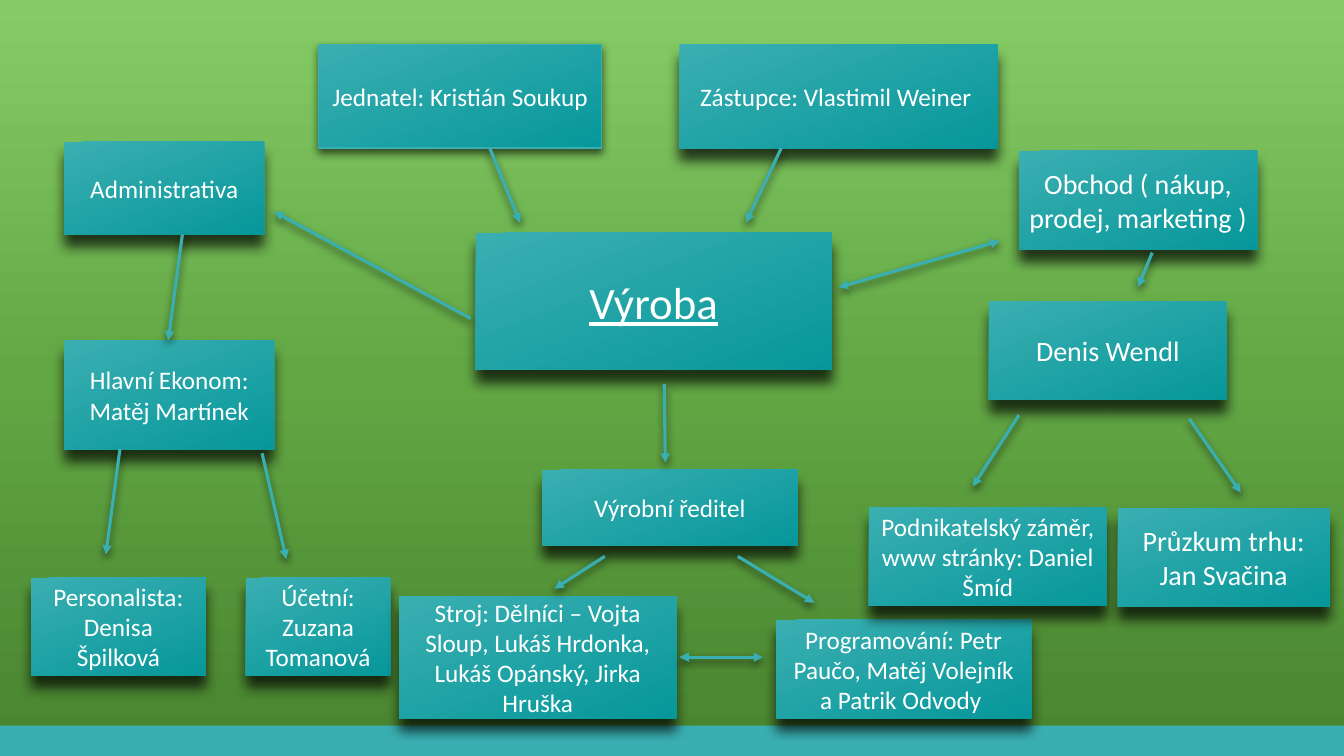
from copy import deepcopy

from lxml.etree import SubElement
from pptx import Presentation
from pptx.dml.color import RGBColor
from pptx.enum.shapes import MSO_CONNECTOR, MSO_SHAPE
from pptx.enum.text import MSO_ANCHOR, PP_ALIGN
from pptx.oxml.ns import qn
from pptx.util import Pt

TEAL, DEEP, WHITE = "3AAFB2", "07979A", "FFFFFF"
WIDE, HIGH = 960, 540


def paint(color, code):
    color.rgb = RGBColor.from_string(code)


def shade(shape, alpha, blur, dist):
    """Give the shape a black shadow that falls straight down."""
    effect = SubElement(shape.element.spPr, qn("a:effectLst"))
    outer = SubElement(effect, qn("a:outerShdw"), blurRad=str(Pt(blur)),
                       dist=str(Pt(dist)), dir="5400000", algn="ctr", rotWithShape="0")
    black = SubElement(outer, qn("a:srgbClr"), val="000000")
    SubElement(black, qn("a:alpha"), val=str(alpha * 1000))


def write(shape, text, size=18, color=WHITE, under=False):
    frame = shape.text_frame
    frame.word_wrap = True
    frame.vertical_anchor = MSO_ANCHOR.MIDDLE
    para = frame.paragraphs[0]
    para.alignment = PP_ALIGN.CENTER
    run = para.add_run()
    run.text = text
    run.font.name = "Calibri"
    run.font.size = Pt(size)
    run.font.underline = under
    paint(run.font.color, color)


def card(slide, x, y, w, h, text, edge=False, **style):
    shape = slide.shapes.add_shape(MSO_SHAPE.RECTANGLE, Pt(x), Pt(y), Pt(w), Pt(h))
    shape.fill.gradient()
    shape.fill.gradient_angle = 291
    for stop, code in zip(shape.fill.gradient_stops, (TEAL, DEEP)):
        paint(stop.color, code)
    if edge:
        shape.line.width = Pt(1)
        shape.line.fill.solid()
        paint(shape.line.color, TEAL)
        shade(shape, 60, 6, 3)
    else:
        shape.line.fill.background()
        shade(shape, 70, 9, 9)
    write(shape, text, **style)


def arrow(slide, x, y, dx, dy, both=False):
    """Draw an arrow from (x, y) that runs by (dx, dy)."""
    link = slide.shapes.add_connector(
        MSO_CONNECTOR.STRAIGHT, Pt(x), Pt(y), Pt(x + dx), Pt(y + dy))
    link.line.width = Pt(2.25)
    link.line.fill.solid()
    paint(link.line.color, TEAL)
    line = link.element.spPr.find(qn("a:ln"))
    for end in ("a:headEnd", "a:tailEnd") if both else ("a:tailEnd",):
        SubElement(line, qn(end), type="triangle")
    shade(link, 60, 6, 3)


def ground(slide):
    fill = slide.background.fill
    fill.gradient()
    fill.gradient_angle = 270
    stops = slide.element.find(".//" + qn("a:gsLst"))
    stops.insert(1, deepcopy(stops[0]))
    for stop, code, place in zip(fill.gradient_stops,
                                 ("85CB66", "62A744", "49832F"), (0, 0.5, 1)):
        paint(stop.color, code)
        stop.position = place


def strip(slide, x, y, w, h):
    bar = slide.shapes.add_shape(MSO_SHAPE.RECTANGLE, Pt(x), Pt(y), Pt(w), Pt(h))
    bar.shadow.inherit = False
    bar.fill.solid()
    paint(bar.fill.fore_color, TEAL)
    bar.line.fill.background()


def heads(slide, x, y, w, h):
    tall = 74.2
    card(slide, x, y, 202.3, tall, "Jednatel: Kristián Soukup", edge=True)
    card(slide, x + w - 227.5, y, 227.5, tall, "Zástupce: Vlastimil Weiner ")
    arrow(slide, x + 122.4, y + tall, 21.6, h - tall)
    arrow(slide, x + 330.5, y + tall, -25.2, h - tall)


def office(slide, x, y, w, h):
    left, low = x + 23.7, y + h - 69.8
    card(slide, left, y, 142.6, 66.2, "Administrativa")
    card(slide, left, y + 141.9, 149.8, 77.8, "Hlavní Ekonom: Matěj Martínek")
    card(slide, x, low, 124.6, 69.8, "Personalista: Denisa Špilková")
    card(slide, x + w - 103, low, 103, 69.8, "Účetní: Zuzana Tomanová")
    arrow(slide, x + 108, y + 66.2, -10.1, 75.6)
    arrow(slide, x + 63.4, y + 219.2, -10.1, 75.6)
    arrow(slide, x + 164.9, y + 222.5, 17.3, 75.6)


def works(slide, x, y, w, h):
    card(slide, x + 54.7, y, 254.2, 97.9, "Výroba", size=32, under=True)
    card(slide, x + 102.3, y + 169.2, 182.2, 54, "Výrobní ředitel")
    card(slide, x + w - 182.2, y + h - 70.6, 182.2, 70.6,
         "Programování: Petr Paučo, Matěj Volejník a Patrik Odvody ")
    card(slide, x, y + h - 87.5, 198, 87.5,
         "Stroj: Dělníci – Vojta Sloup, Lukáš Hrdonka, Lukáš Opánský, Jirka Hruška")
    arrow(slide, x + 51.1, y + 61.2, -140.4, -76.3)
    arrow(slide, x + 313.9, y + 38.9, 115.2, -33.1, both=True)
    arrow(slide, x + 189.4, y + 108, 0.7, 56.2)
    arrow(slide, x + 146.9, y + 231.1, -36, 23.1)
    arrow(slide, x + 241.9, y + 231.1, 54.8, 33.2)
    arrow(slide, x + 200.2, y + 303.1, 59.7, 0, both=True)


def trade(slide, x, y, w, h):
    wide, tall = 170, 70.6
    card(slide, x + 107.3, y, wide, tall, "Obchod ( nákup, prodej, marketing )", size=20)
    card(slide, x + 85.7, y + 107.3, wide, tall, "Denis Wendl", size=20)
    card(slide, x, y + h - tall - 0.7, wide, tall,
         "Podnikatelský záměr, www stránky: Daniel Šmíd")
    card(slide, x + w - 151.2, y + h - tall, 151.2, tall,
         "Průzkum trhu: Jan Svačina", size=20)
    arrow(slide, x + 202.4, y + 72.7, -10.1, 24.5)
    arrow(slide, x + 107.3, y + 188.6, -33.1, 51.1)
    arrow(slide, x + 229, y + 191.5, 36.7, 52.6)


def main():
    deck = Presentation()
    deck.slide_width, deck.slide_height = Pt(WIDE), Pt(HIGH)
    slide = deck.slides.add_slide(deck.slide_layouts[6])
    ground(slide)
    strip(slide, 0, HIGH - 21.6, WIDE, 21.6)
    heads(slide, 227.5, 31.7, 485.3, 127.4)
    office(slide, 22.3, 101.3, 256.4, 381.1)
    works(slide, 285.1, 166.3, 451.5, 347)
    trade(slide, 620.6, 107.8, 329.1, 325.7)
    deck.save("out.pptx")


if __name__ == "__main__":
    main()
